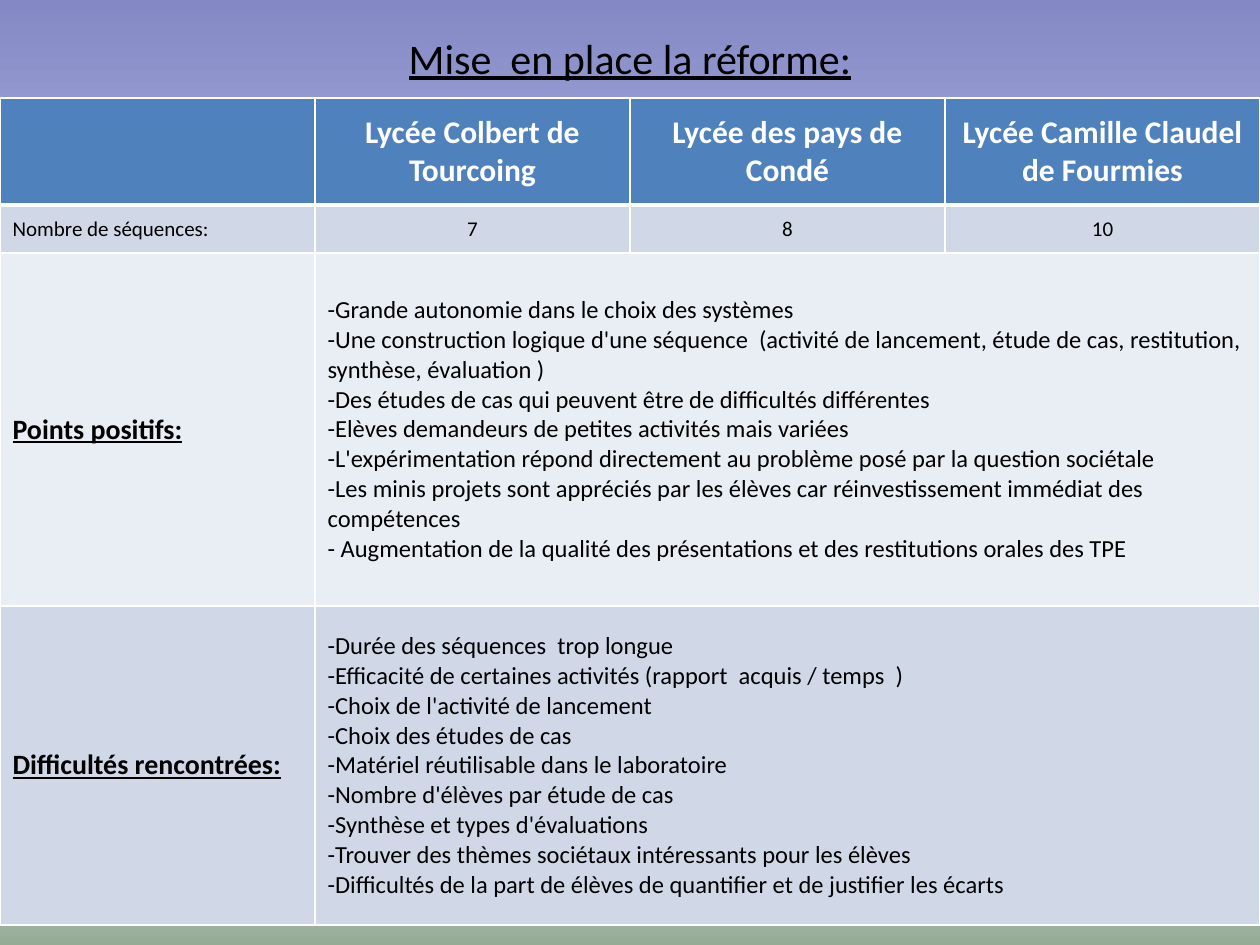
from lxml import etree
from pptx import Presentation
from pptx.dml.color import RGBColor
from pptx.enum.text import MSO_ANCHOR, PP_ALIGN
from pptx.oxml.ns import qn
from pptx.util import Pt

LEFT, CENTER = PP_ALIGN.LEFT, PP_ALIGN.CENTER
MIDDLE = MSO_ANCHOR.MIDDLE
SCALE = 914400 / 126
WIDTH, HEIGHT = 1260, 945
BLUE, BAND, PALE = "4F81BD", "D0D8E8", "E9EDF4"
COLUMN_WIDTH = 315
ROW_HEIGHTS = [107, 48, 353, 319]
ROW_FILLS = [BLUE, BAND, PALE, BAND]
GRADIENT = [(0, "8488C4"), (53, "D4DEFF"), (83, "D4DEFF"), (100, "96AB94")]

HEADERS = ["Lycée Colbert de Tourcoing", "Lycée des pays de Condé", "Lycée Camille Claudel de Fourmies"]
COUNTS = ["7", "8", "10"]
POSITIVES = [
    "-Grande autonomie dans le choix des systèmes",
    "-Une construction logique d'une séquence  (activité de lancement, étude de cas, restitution, synthèse, évaluation )",
    "-Des études de cas qui peuvent être de difficultés différentes",
    "-Elèves demandeurs de petites activités mais variées",
    "-L'expérimentation répond directement au problème posé par la question sociétale",
    "-Les minis projets sont appréciés par les élèves car réinvestissement immédiat des compétences",
    "- Augmentation de la qualité des présentations et des restitutions orales des TPE",
]
DIFFICULTIES = [
    "-Durée des séquences  trop longue",
    "-Efficacité de certaines activités (rapport  acquis / temps  )",
    "-Choix de l'activité de lancement",
    "-Choix des études de cas",
    "-Matériel réutilisable dans le laboratoire",
    "-Nombre d'élèves par étude de cas",
    "-Synthèse et types d'évaluations",
    "-Trouver des thèmes sociétaux intéressants pour les élèves",
    "-Difficultés de la part de élèves de quantifier et de justifier les écarts",
]


def px(value):
    return round(value * SCALE)


def write(frame, *lines, size, color="000000", bold=False, underline=False, align=LEFT):
    frame.word_wrap = True
    for index, line in enumerate(lines):
        paragraph = frame.add_paragraph() if index else frame.paragraphs[0]
        paragraph.alignment = align
        run = paragraph.add_run()
        run.text = line
        font = run.font
        font.name, font.size = "Calibri", Pt(size)
        font.bold, font.underline = bold, underline
        font.color.rgb = RGBColor.from_string(color)


presentation = Presentation()
presentation.slide_width, presentation.slide_height = px(WIDTH), px(HEIGHT)
slide = presentation.slides.add_slide(presentation.slide_layouts[6])

background = slide.background.fill
background.gradient()
background.gradient_angle = 270
stops = next(slide.element.iter(qn("a:gsLst")))
for stop in list(stops):
    stops.remove(stop)
for position, color in GRADIENT:
    stop = etree.SubElement(stops, qn("a:gs"), pos=str(position * 1000))
    etree.SubElement(stop, qn("a:srgbClr"), val=color)

title = slide.shapes.add_textbox(0, 0, px(WIDTH), px(115)).text_frame
title.vertical_anchor = MIDDLE
write(title, "Mise  en place la réforme:", size=24, underline=True, align=CENTER)

table = slide.shapes.add_table(4, 4, 0, px(98), px(WIDTH), px(sum(ROW_HEIGHTS))).table
for column in table.columns:
    column.width = px(COLUMN_WIDTH)
for row_index, (height, fill) in enumerate(zip(ROW_HEIGHTS, ROW_FILLS)):
    table.rows[row_index].height = px(height)
    for cell in table.rows[row_index].cells:
        cell.vertical_anchor = MIDDLE
        properties = cell._tc.get_or_add_tcPr()
        for side in "LRTB":
            thick = (row_index, side) in [(0, "B"), (1, "T")]
            line = etree.SubElement(properties, qn(f"a:ln{side}"), w=str(Pt(3 if thick else 1)))
            solid = etree.SubElement(line, qn("a:solidFill"))
            etree.SubElement(solid, qn("a:srgbClr"), val="FFFFFF")
        cell.fill.solid()
        cell.fill.fore_color.rgb = RGBColor.from_string(fill)

write(table.cell(1, 0).text_frame, "Nombre de séquences:", size=12)
for column_index, (header, count) in enumerate(zip(HEADERS, COUNTS), 1):
    write(table.cell(0, column_index).text_frame, header, size=18, color="FFFFFF", bold=True, align=CENTER)
    write(table.cell(1, column_index).text_frame, count, size=12, align=CENTER)

sections = [("Points positifs:", POSITIVES), ("Difficultés rencontrées:", DIFFICULTIES)]
for row_index, (heading, lines) in enumerate(sections, 2):
    table.cell(row_index, 1).merge(table.cell(row_index, 3))
    write(table.cell(row_index, 0).text_frame, heading, size=16, bold=True, underline=True)
    write(table.cell(row_index, 1).text_frame, *lines, size=14)

presentation.save("out.pptx")
